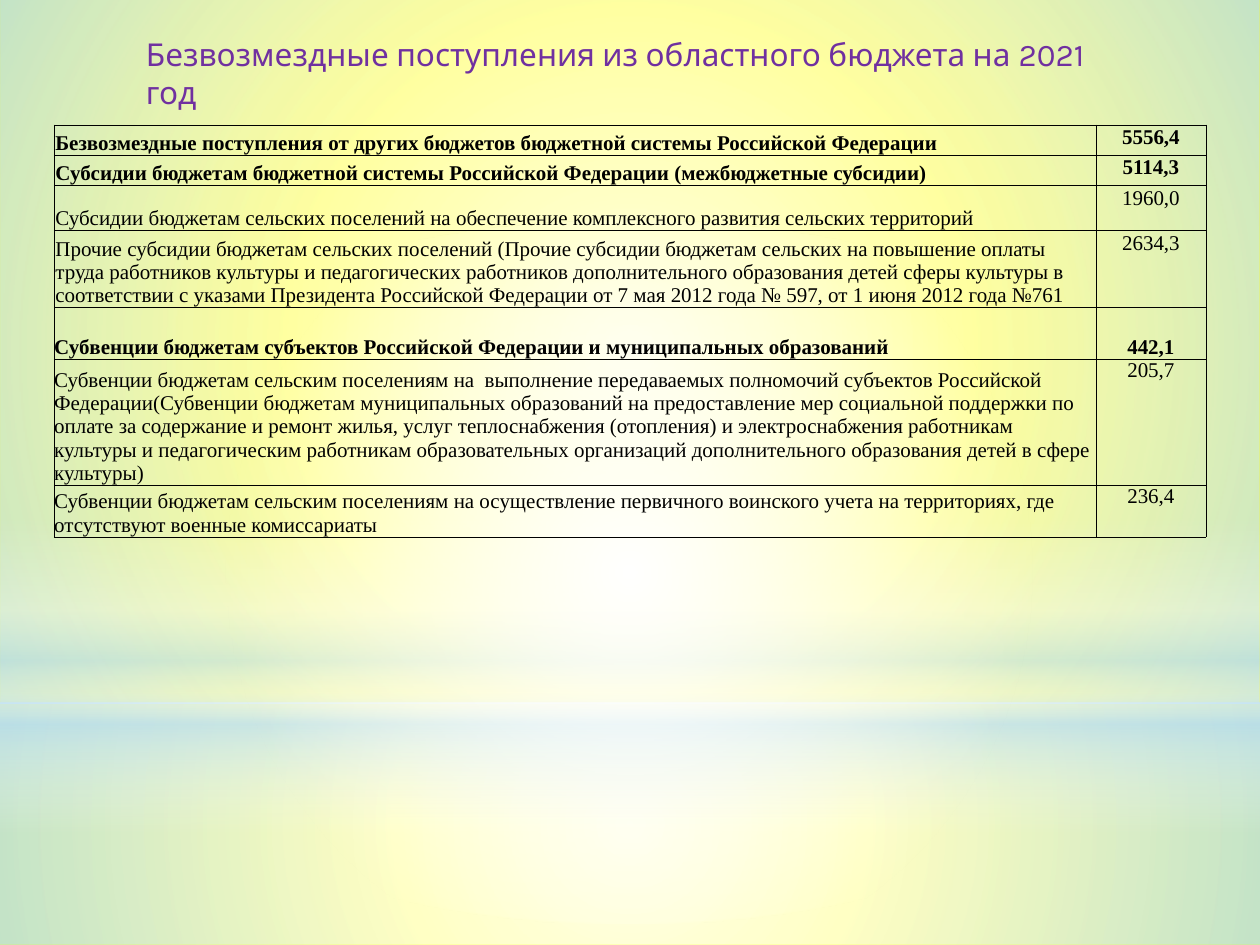
import dataclasses

import pptx
import pptx.dml.color
import pptx.enum.shapes
import pptx.enum.text
import pptx.oxml
import pptx.oxml.ns
import pptx.util

Inches = pptx.util.Inches
Anchor = pptx.enum.text.MSO_ANCHOR
Align = pptx.enum.text.PP_ALIGN
Shape = pptx.enum.shapes.MSO_SHAPE


@dataclasses.dataclass(frozen=True)
class Theme:
    ground: str = "FFFF00"
    white: str = "FFFFFF"
    sky: str = "B4DCFA"
    title: str = "7030A0"
    ink: str = "000000"
    title_font: str = "Karla"
    table_font: str = "Times New Roman"
    title_size: int = 18
    table_size: int = 12
    border_width: float = 0.23


THEME = Theme()
CIRCLE = '<a:path path="circle"><a:fillToRect l="50000" t="50000" r="50000" b="50000"/></a:path>'
DOWNWARD = '<a:lin ang="5400000" scaled="0"/>'

GLOWS = [
    (Shape.RECTANGLE, (0, 5.58, 10, 1.92), CIRCLE,
     [(0, THEME.white, 91), (37, THEME.white, 76), (100, THEME.sky, 79)]),
    (Shape.RECTANGLE, (0, 0, 10, 5.58), CIRCLE,
     [(0, THEME.white, 89), (48, THEME.white, 62), (100, THEME.sky, 79)]),
    (Shape.RECTANGLE, (0, 4.12, 10, 2.5), DOWNWARD,
     [(0, THEME.white, 0), (29, THEME.white, 30), (45, THEME.sky, 40),
      (55, THEME.white, 26), (65, THEME.sky, 60), (100, THEME.white, 0)]),
    (Shape.OVAL, (0, 1.75, 10, 5.58), CIRCLE,
     [(0, THEME.white, 100), (56, THEME.white, 0)]),
]

TITLE = "Безвозмездные поступления из областного бюджета на 2021 год"

COLUMN_WIDTHS = (8.27, 0.87)
WIDE_INSET_ROWS = 4
ROWS = [
    (0.24, True, Anchor.TOP, "5556,4",
     "Безвозмездные поступления от других бюджетов бюджетной системы Российской Федерации"),
    (0.24, True, Anchor.TOP, "5114,3",
     "Субсидии бюджетам бюджетной системы Российской Федерации (межбюджетные субсидии)"),
    (0.36, False, Anchor.TOP, "1960,0",
     "Субсидии бюджетам сельских поселений на обеспечение комплексного развития сельских территорий"),
    (0.46, False, Anchor.TOP, "2634,3",
     "Прочие субсидии бюджетам сельских поселений (Прочие субсидии бюджетам сельских на повышение "
     "оплаты труда работников культуры и педагогических работников дополнительного образования детей "
     "сферы культуры в соответствии с указами Президента Российской Федерации от 7 мая 2012 года "
     "№ 597, от 1 июня 2012 года №761"),
    (0.41, True, Anchor.BOTTOM, "442,1",
     "Субвенции бюджетам субъектов Российской Федерации и муниципальных образований"),
    (0.41, False, Anchor.TOP, "205,7",
     "Субвенции бюджетам сельским поселениям на  выполнение передаваемых полномочий субъектов "
     "Российской Федерации(Субвенции бюджетам муниципальных образований на предоставление мер "
     "социальной поддержки по оплате за содержание и ремонт жилья, услуг теплоснабжения (отопления) "
     "и электроснабжения работникам культуры и педагогическим работникам образовательных организаций "
     "дополнительного образования детей в сфере культуры)"),
    (0.41, False, Anchor.TOP, "236,4",
     "Субвенции бюджетам сельским поселениям на осуществление первичного воинского учета "
     "на территориях, где отсутствуют военные комиссариаты"),
]


def parse_drawing(name, body, attributes=""):
    namespace = pptx.oxml.ns.nsdecls("a")
    return pptx.oxml.parse_xml(f"<a:{name} {namespace} {attributes}>{body}</a:{name}>")


def style_font(font, name, size, color, bold=False):
    font.name = name
    font.size = pptx.util.Pt(size)
    font.bold = bold
    font.color.rgb = pptx.dml.color.RGBColor.from_string(color)


def fill_gradient(shape, stops, direction):
    shape.fill.background()
    stop_list = "".join(
        f'<a:gs pos="{position * 1000}"><a:srgbClr val="{color}">'
        f'<a:alpha val="{opacity * 1000}"/></a:srgbClr></a:gs>'
        for position, color, opacity in stops
    )
    gradient = parse_drawing("gradFill", f"<a:gsLst>{stop_list}</a:gsLst>{direction}",
                             'rotWithShape="1"')
    properties = shape.element.spPr
    properties.replace(properties.find(pptx.oxml.ns.qn("a:noFill")), gradient)


def add_backdrop(page):
    fill = page.background.fill
    fill.solid()
    fill.fore_color.rgb = pptx.dml.color.RGBColor.from_string(THEME.ground)
    for kind, area, direction, stops in GLOWS:
        glow = page.shapes.add_shape(kind, *map(Inches, area))
        glow.shadow.inherit = False
        glow.line.fill.background()
        fill_gradient(glow, stops, direction)


def add_title(page, area):
    box = page.shapes.add_textbox(*map(Inches, area))
    frame = box.text_frame
    frame.word_wrap = True
    frame.auto_size = pptx.enum.text.MSO_AUTO_SIZE.SHAPE_TO_FIT_TEXT
    frame.vertical_anchor = Anchor.MIDDLE
    frame.text = TITLE
    style_font(frame.paragraphs[0].runs[0].font, THEME.title_font, THEME.title_size, THEME.title)


def set_borders(cell):
    width = pptx.util.Pt(THEME.border_width)
    line = f'<a:solidFill><a:srgbClr val="{THEME.ink}"/></a:solidFill>'
    properties = cell._tc.get_or_add_tcPr()
    for index, side in enumerate(("lnL", "lnR", "lnT", "lnB")):
        properties.insert(index, parse_drawing(side, line, f'w="{width}"'))


def fill_cell(cell, text, anchor, alignment, bold, inset):
    cell.text_frame.text = text
    cell.vertical_anchor = anchor
    cell.margin_left = cell.margin_right = cell.margin_top = Inches(inset)
    cell.margin_bottom = 0
    para = cell.text_frame.paragraphs[0]
    para.alignment = alignment
    style_font(para.runs[0].font, THEME.table_font, THEME.table_size, THEME.ink, bold)
    cell.fill.background()
    set_borders(cell)


def add_budget_table(page, left, top):
    width = sum(COLUMN_WIDTHS)
    height = sum(row[0] for row in ROWS)
    table = page.shapes.add_table(len(ROWS), len(COLUMN_WIDTHS), Inches(left), Inches(top),
                                  Inches(width), Inches(height)).table
    table.first_row = False
    table.horz_banding = False
    for column, column_width in zip(table.columns, COLUMN_WIDTHS):
        column.width = Inches(column_width)
    for index, (row_height, bold, amount_anchor, amount, label) in enumerate(ROWS):
        table.rows[index].height = Inches(row_height)
        inset = 0.01 if index < WIDE_INSET_ROWS else 0
        fill_cell(table.cell(index, 0), label, Anchor.BOTTOM, Align.LEFT, bold, inset)
        fill_cell(table.cell(index, 1), amount, amount_anchor, Align.CENTER, bold, inset)


def main():
    deck = pptx.Presentation()
    deck.slide_width = Inches(10)
    deck.slide_height = Inches(7.5)
    page = deck.slides.add_slide(deck.slide_layouts[6])
    add_backdrop(page)
    add_title(page, (1.06, 0.38, 7.95, 0.4))
    add_budget_table(page, 0.43, 0.99)
    deck.save("out.pptx")


if __name__ == "__main__":
    main()
